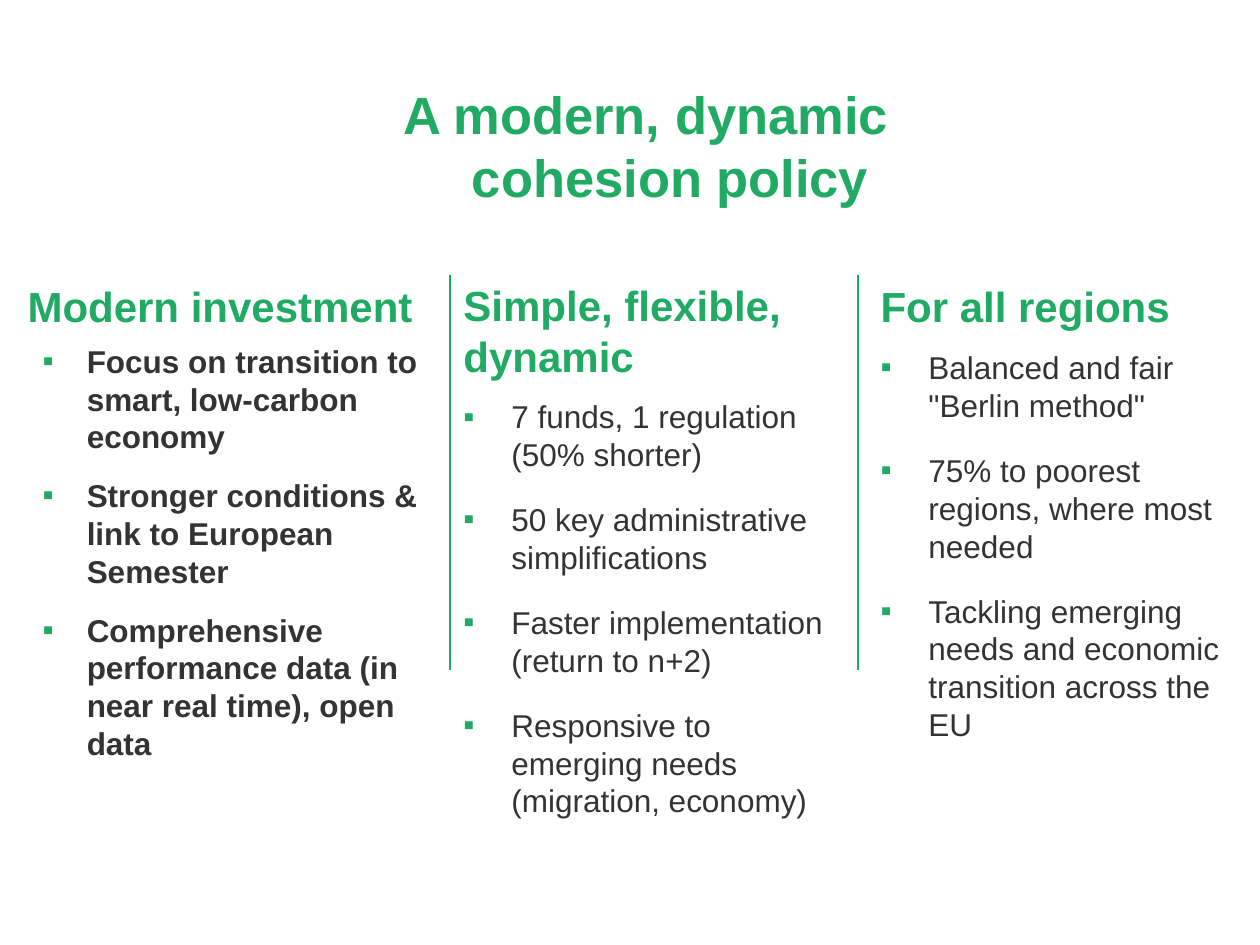
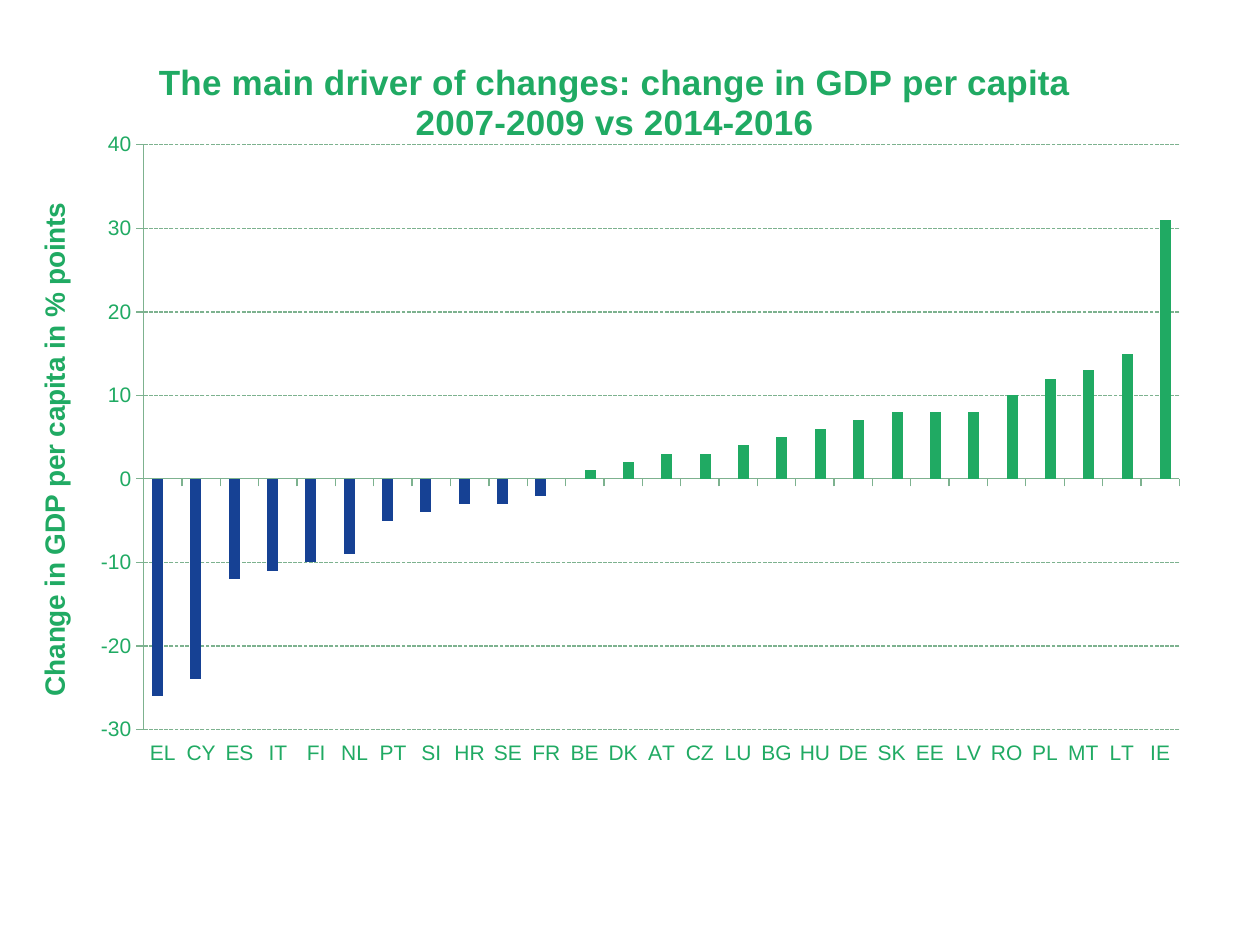
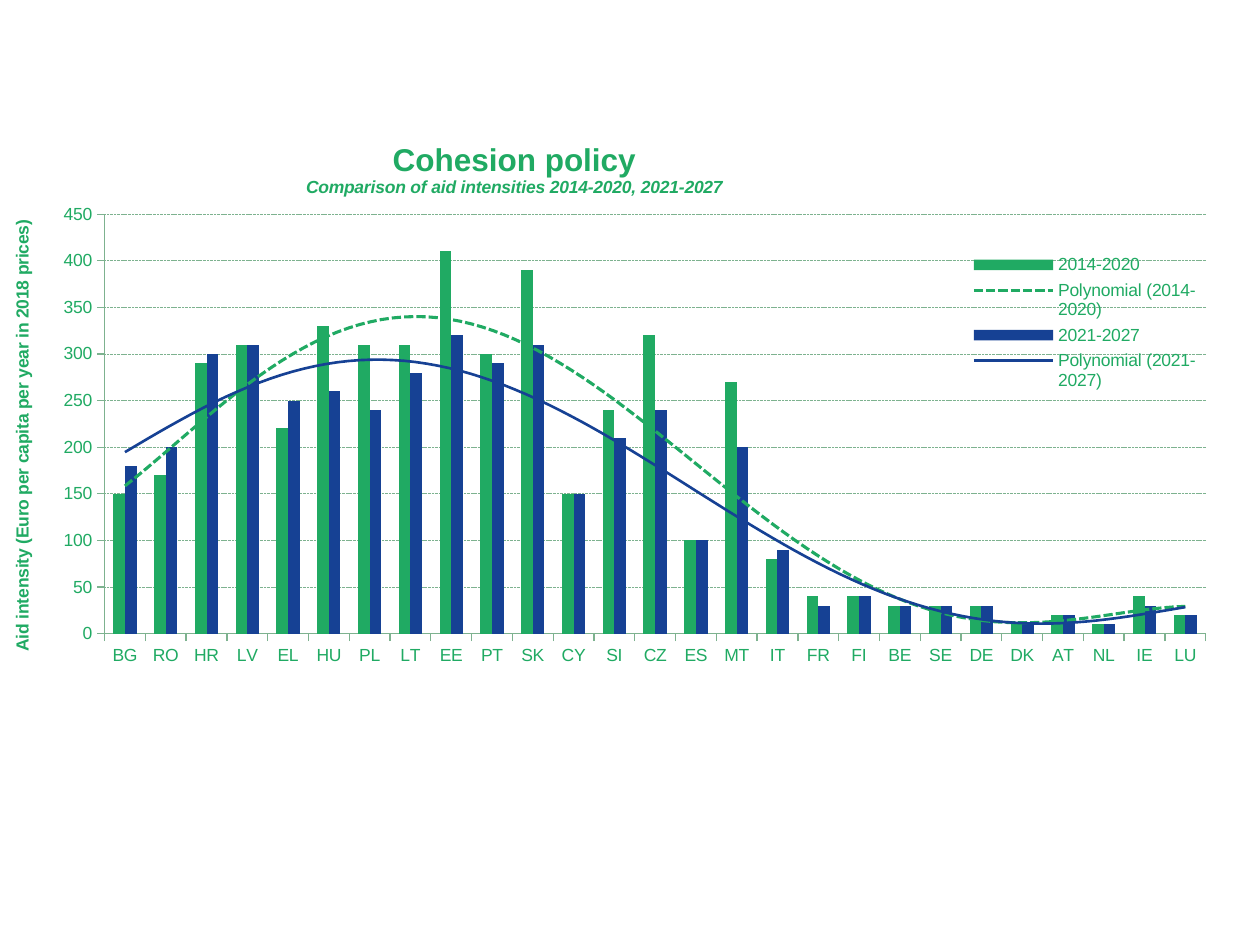
from lxml import etree
from pptx import Presentation
from pptx.chart.data import CategoryChartData
from pptx.dml.color import RGBColor
from pptx.enum.chart import XL_CHART_TYPE, XL_LEGEND_POSITION, XL_TICK_LABEL_POSITION, XL_TICK_MARK
from pptx.enum.dml import MSO_LINE
from pptx.enum.shapes import MSO_CONNECTOR
from pptx.enum.text import MSO_ANCHOR, PP_ALIGN
from pptx.oxml import parse_xml
from pptx.oxml.ns import nsdecls, qn
from pptx.util import Inches, Pt

COLUMNS = XL_CHART_TYPE.COLUMN_CLUSTERED
STRAIGHT = MSO_CONNECTOR.STRAIGHT
TICK_OUT, TICK_NONE = XL_TICK_MARK.OUTSIDE, XL_TICK_MARK.NONE
LOW = XL_TICK_LABEL_POSITION.LOW
RIGHT = XL_LEGEND_POSITION.RIGHT
DASH = MSO_LINE.SQUARE_DOT
TOP, CENTER = MSO_ANCHOR.TOP, PP_ALIGN.CENTER

FONT = "Arial"
GREEN, DARK, BLUE = "20AA63", "333333", "164194"
DIVIDER, GRID = "1CAA61", "7DB28F"


def color(target, hex_value):
    """Colour a font, or a fill or line format made solid first."""
    if hasattr(target, "fill"):
        target = target.fill
    if hasattr(target, "solid"):
        target.solid()
        target = target.fore_color
    else:
        target = target.color
    target.rgb = RGBColor.from_string(hex_value)


def place(element, index, chart_size, position):
    """Put a chart part at left, top (width, height), in inches within the chart."""
    for old_layout in element.findall(qn("c:layout")):
        element.remove(old_layout)
    layout = parse_xml(f"<c:layout {nsdecls('c')}><c:manualLayout/></c:layout>")
    settings = [("xMode", "edge"), ("yMode", "edge")]
    if element.tag == qn("c:plotArea"):
        settings.insert(0, ("layoutTarget", "inner"))
    settings += [(name, length / total) for name, length, total in zip("xywh", position, chart_size * 2)]
    for name, value in settings:
        etree.SubElement(layout[0], qn(f"c:{name}")).set("val", str(value))
    element.insert(index, layout)


presentation = Presentation()
presentation.slide_width, presentation.slide_height = Inches(10), Inches(7.5)
title_only, blank = presentation.slide_layouts[5], presentation.slide_layouts[6]

# Slide 1: title
slide = presentation.slides.add_slide(title_only)
title = slide.shapes.title
title.left, title.top = Inches(2.17), Inches(0.6)
title.width, title.height = Inches(5.91), Inches(0.79)
title.text_frame.text = "A modern, dynamic cohesion policy"
title.text_frame.vertical_anchor = TOP
paragraph = title.text_frame.paragraphs[0]
paragraph.alignment = CENTER
properties = paragraph._p.get_or_add_pPr()
properties.set("marL", str(Inches(0.39)))
properties.set("indent", str(-Inches(0.39)))
paragraph.font.name, paragraph.font.size, paragraph.font.bold = FONT, Pt(30), True
color(paragraph.font, GREEN)

# Slide 1: three columns (place, indents, space before, bold, heading, bullets)
columns = [
    ((0.12, 2.18, 3.45), (0.47, 0.35), 0, True, "Modern investment", [
        "Focus on transition to smart, low-carbon economy",
        "Stronger conditions & link to European Semester",
        "Comprehensive performance data (in near real time), open data"]),
    ((3.58, 2.17, 3.15), (0.38, 0.38), 3.6, False, "Simple, flexible, dynamic", [
        "7 funds, 1 regulation (50% shorter)",
        "50 key administrative simplifications",
        "Faster implementation (return to n+2)",
        "Responsive to emerging needs (migration, economy)"]),
    ((6.89, 2.18, 2.91), (0.38, 0.38), 3.6, False, "For all regions", [
        "Balanced and fair \"Berlin method\"",
        "75% to poorest regions, where most needed",
        "Tackling emerging needs and economic transition across the EU"]),
]
for (left, top, width), (indent, hanging), space_before, bold, heading, bullets in columns:
    box = slide.shapes.add_textbox(Inches(left), Inches(top), Inches(width), Inches(4.29))
    text_frame = box.text_frame
    text_frame.word_wrap = True
    text_frame.text = "\n".join([heading] + bullets)
    for number, paragraph in enumerate(text_frame.paragraphs):
        is_heading = number == 0
        if not is_heading:
            properties = paragraph._p.get_or_add_pPr()
            properties.set("marL", str(Inches(indent)))
            properties.set("indent", str(-Inches(hanging)))
            bullet_color = etree.SubElement(properties, qn("a:buClr"))
            etree.SubElement(bullet_color, qn("a:srgbClr")).set("val", GREEN)
            etree.SubElement(properties, qn("a:buFont")).set("typeface", FONT)
            etree.SubElement(properties, qn("a:buChar")).set("char", "▪")
            paragraph.space_before = Pt(space_before)
        paragraph.space_after = Pt(6 if is_heading else 12)
        paragraph.font.name = FONT
        paragraph.font.size = Pt(24 if is_heading else 18)
        paragraph.font.bold = is_heading or bold
        color(paragraph.font, GREEN if is_heading else DARK)

# Slide 1: dividers between the columns
for x in (3.57, 6.81):
    divider = slide.shapes.add_connector(STRAIGHT, Inches(x), Inches(2.18), Inches(x), Inches(5.32))
    color(divider.line, DIVIDER)
    divider.line.width = Pt(1)
    etree.SubElement(divider._element.spPr, qn("a:effectLst"))

# Slides 2 and 3: chart data
losses = [-26, -24, -12, -11, -10, -9, -5, -4, -3, -3, -2]
gains = [1, 2, 3, 3, 4, 5, 6, 7, 8, 8, 8, 10, 12, 13, 15, 31]
charts = [
    {
        "box": (0.2, 0.29, 9.37, 5.91),
        "size": 12,
        "categories": "EL CY ES IT FI NL PT SI HR SE FR BE DK AT CZ LU BG HU DE SK EE LV RO PL MT LT IE",
        "series": [("Series 1", BLUE, losses + [None] * len(gains)),
                   ("Series 2", GREEN, [None] * len(losses) + gains)],
        "title": [("The main driver of changes: change in GDP per capita", 20, False),
                  ("2007-2009 vs 2014-2016", 20, False)],
        "title_place": (1.03, 0.17),
        "axis_title": ("Change in GDP per capita in % points", 16),
        "axis_title_place": (0.05, 1.28),
        "scale": (-30, 40, 10),
        "plot_place": (0.94, 0.86, 8.22, 4.64),
        "grid_width": 0.75,
        "trends": [],
    },
    {
        "box": (0, 1.07, 9.8, 4.54),
        "size": 10,
        "categories": "BG RO HR LV EL HU PL LT EE PT SK CY SI CZ ES MT IT FR FI BE SE DE DK AT NL IE LU",
        "series": [("2014-2020", GREEN, [150, 170, 290, 310, 220, 330, 310, 310, 410, 300, 390, 150, 240, 320,
                                         100, 270, 80, 40, 40, 30, 30, 30, 10, 20, 10, 40, 20]),
                   ("2021-2027", BLUE, [180, 200, 300, 310, 250, 260, 240, 280, 320, 290, 310, 150, 210, 240,
                                        100, 200, 90, 30, 40, 30, 30, 30, 10, 20, 10, 30, 20])],
        "title": [("Cohesion policy", 18, False),
                  ("Comparison of aid intensities 2014-2020, 2021-2027", 10, True)],
        "title_place": (2.4, 0.01),
        "axis_title": ("Aid intensity (Euro per capita per year in 2018 prices)", 10),
        "axis_title_place": (0.06, 0.65),
        "scale": (0, 450, 50),
        "plot_place": (0.83, 0.63, 8.74, 3.33),
        "grid_width": 0.5,
        "trends": [(1.75, "sysDash"), (1.5, "solid")],
    },
]

for settings in charts:
    slide = presentation.slides.add_slide(blank)
    chart_data = CategoryChartData(number_format="0")
    chart_data.categories = settings["categories"].split()
    for name, fill, values in settings["series"]:
        chart_data.add_series(name, values)
    box = [Inches(length) for length in settings["box"]]
    chart_size = settings["box"][2:]
    chart = slide.shapes.add_chart(COLUMNS, *box, chart_data).chart
    chart.font.name, chart.font.size = FONT, Pt(settings["size"])
    color(chart.font, GREEN)

    # Columns
    plot = chart.plots[0]
    plot.gap_width, plot.overlap, plot.vary_by_categories = 150, 0, False
    for series, (name, fill, values) in zip(plot.series, settings["series"]):
        color(series.format, fill)
        series.invert_if_negative = False
    place(chart.element.xpath("c:chart/c:plotArea")[0], 0, chart_size, settings["plot_place"])

    # Axes and grid
    value_axis, category_axis = chart.value_axis, chart.category_axis
    value_axis.minimum_scale, value_axis.maximum_scale, value_axis.major_unit = settings["scale"]
    value_axis.tick_labels.number_format = "0"
    value_axis.tick_labels.number_format_is_linked = False
    category_axis.tick_label_position = LOW
    for axis in (value_axis, category_axis):
        axis.major_tick_mark, axis.minor_tick_mark = TICK_OUT, TICK_NONE
        color(axis.format.line, GRID)
        axis.format.line.width = Pt(0.75)
    gridline = value_axis.major_gridlines.format.line
    color(gridline, GRID)
    gridline.width, gridline.dash_style = Pt(settings["grid_width"]), DASH

    # Chart title and axis title
    value_axis.has_title = True
    axis_text, axis_size = settings["axis_title"]
    titles = [(chart.chart_title, settings["title"], settings["title_place"]),
              (value_axis.axis_title, [(axis_text, axis_size, False)], settings["axis_title_place"])]
    for chart_title, lines, position in titles:
        chart_title.text_frame.text = "\n".join(text for text, size, italic in lines)
        for paragraph, (text, size, italic) in zip(chart_title.text_frame.paragraphs, lines):
            font = paragraph.runs[0].font
            font.name, font.size, font.bold, font.italic = FONT, Pt(size), True, italic
            color(font, GREEN)
        place(chart_title._element, 1, chart_size, position)
    value_axis.axis_title.text_frame._txBody.bodyPr.set("rot", "-5400000")
    value_axis.axis_title.text_frame._txBody.bodyPr.set("vert", "horz")

    # Trend lines and legend
    chart.has_legend = bool(settings["trends"])
    for series, (name, fill, values), (width, dash) in zip(plot.series, settings["series"], settings["trends"]):
        trend = parse_xml(
            f"<c:trendline {nsdecls('c', 'a')}><c:name>Polynomial ({name})</c:name>"
            f"<c:spPr><a:ln w='{Pt(width)}'><a:solidFill><a:srgbClr val='{fill}'/></a:solidFill>"
            f"<a:prstDash val='{dash}'/></a:ln></c:spPr><c:trendlineType val='poly'/>"
            "<c:order val='5'/><c:dispRSqr val='0'/><c:dispEq val='0'/></c:trendline>")
        series._element.find(qn("c:cat")).addprevious(trend)
    if chart.has_legend:
        chart.legend.position = RIGHT
        chart.legend.include_in_layout = False
        place(chart.legend._element, 1, chart_size, (7.68, 0.91, 1.86, 1.16))

presentation.save("out.pptx")
